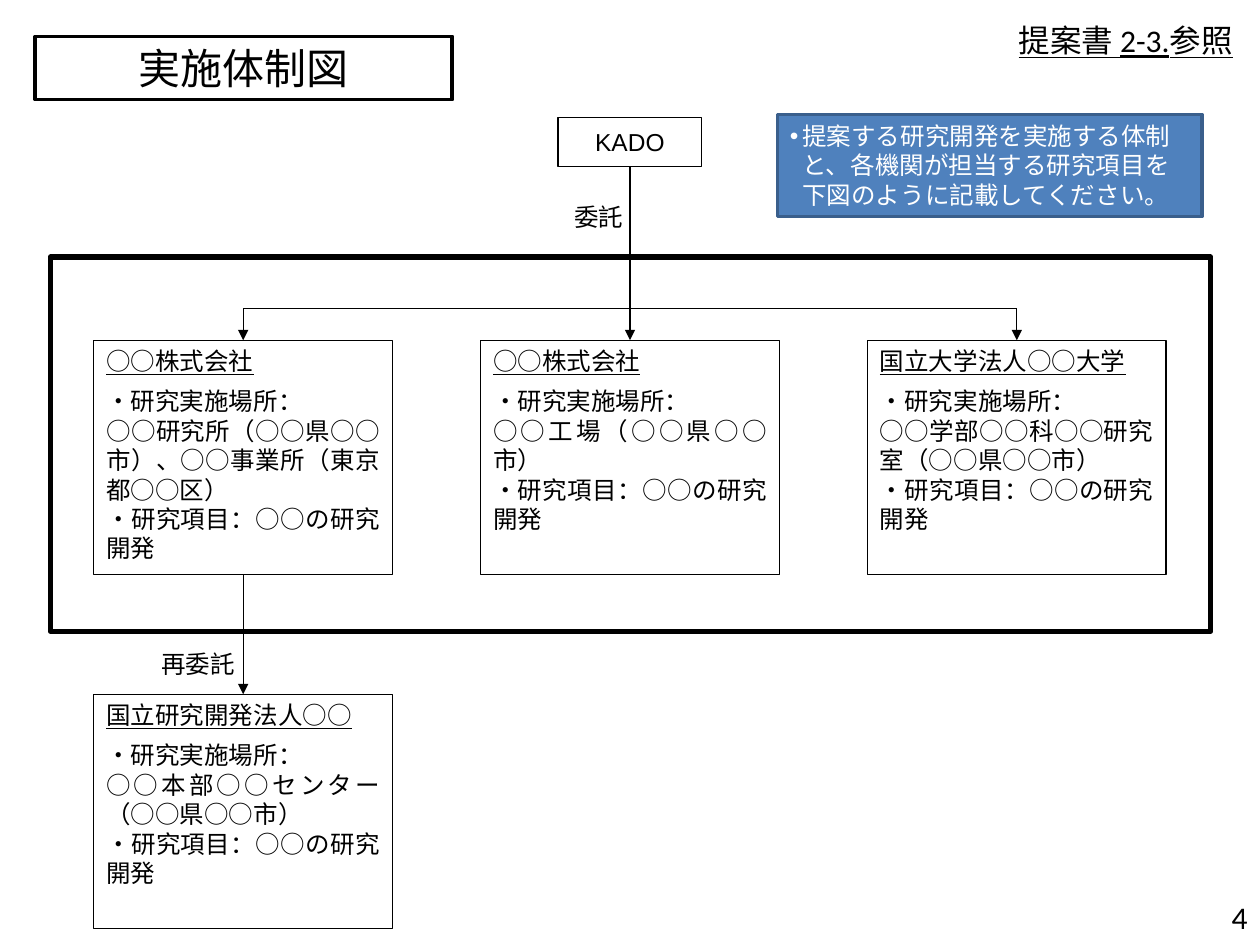
"""Build the project organisation chart slide."""
from dataclasses import dataclass

from lxml.etree import SubElement
from pptx import Presentation
from pptx.dml.color import RGBColor
from pptx.enum.shapes import MSO_CONNECTOR, MSO_SHAPE
from pptx.enum.text import MSO_ANCHOR, PP_ALIGN
from pptx.oxml.ns import qn
from pptx.util import Inches, Pt


@dataclass(frozen=True)
class Theme:
    ink: str = "000000"
    paper: str = "FFFFFF"
    note_fill: str = "4F81BD"
    note_line: str = "3A5F8C"
    title_size: int = 24
    reference_size: int = 18
    body_size: int = 14
    body_font: str = "Arial"
    note_font: str = "Calibri"
    thin: float = 0.75


theme = Theme()
presentation = Presentation()
presentation.slide_width = Inches(10)
presentation.slide_height = Inches(7.5)
slide = presentation.slides.add_slide(presentation.slide_layouts[6])
column = presentation.slide_width / 100
row = presentation.slide_height / 75


def add_text(text, *, at, fill=None, line=None, line_width=theme.thin, size=theme.body_size,
             font=theme.body_font, color=theme.ink, align=PP_ALIGN.JUSTIFY,
             anchor=MSO_ANCHOR.TOP, underline_first=False, bullet=None):
    left, top, width, height = at
    box = (int(left * column), int(top * row), int(width * column), int(height * row))
    if line:
        shape = slide.shapes.add_shape(MSO_SHAPE.RECTANGLE, *box)
        shape.shadow.inherit = False
        shape.line.color.rgb = RGBColor.from_string(line)
        shape.line.width = Pt(line_width)
    else:
        shape = slide.shapes.add_textbox(*box)
    if fill:
        shape.fill.solid()
        shape.fill.fore_color.rgb = RGBColor.from_string(fill)
    else:
        shape.fill.background()
    frame = shape.text_frame
    frame.word_wrap = True
    frame.vertical_anchor = anchor
    frame.text = text
    for index, paragraph in enumerate(frame.paragraphs):
        paragraph.alignment = align
        paragraph.font.size = Pt(size)
        if underline_first and index == 0 and len(frame.paragraphs) > 1:
            paragraph.space_after = Pt(6)
        for run in paragraph.runs:
            run.font.name = font
            run.font.size = Pt(size)
            run.font.color.rgb = RGBColor.from_string(color)
            run.font.underline = underline_first and index == 0
        if bullet:
            properties = paragraph._p.get_or_add_pPr()
            properties.set("marL", str(Inches(0.1)))
            properties.set("indent", str(-Inches(0.1)))
            SubElement(properties, qn("a:buFont"), typeface=theme.body_font)
            SubElement(properties, qn("a:buChar"), char=bullet)


def add_line(start, end, arrow=True):
    connector = slide.shapes.add_connector(
        MSO_CONNECTOR.STRAIGHT,
        int(start[0] * column), int(start[1] * row), int(end[0] * column), int(end[1] * row))
    connector.line.color.rgb = RGBColor.from_string(theme.ink)
    connector.line.width = Pt(theme.thin)
    if arrow:
        SubElement(connector.line._get_or_add_ln(), qn("a:tailEnd"), type="triangle")
    SubElement(connector._element.spPr, qn("a:effectLst"))


card_width, card_height = 23.7, 18.6
card_pitch = 30.7
first_center, center, last_center = [50 + step * card_pitch for step in (-1, 0, 1)]
client_bottom, branch_top, card_top, subcontract_top = 13.1, 24.5, 27, 55.1

add_text("4", at=(76.7, 70.8, 23.3, 4), size=theme.reference_size, font=theme.note_font,
         align=PP_ALIGN.RIGHT, anchor=MSO_ANCHOR.MIDDLE)
add_text("実施体制図", at=(2.8, 2.9, 33.1, 5), fill=theme.paper, line=theme.ink,
         line_width=2.25, size=theme.title_size, align=PP_ALIGN.CENTER)
add_text("提案書 2-3.参照", at=(68.9, 1.2, 29.9, 4), size=theme.reference_size,
         font=theme.note_font, align=PP_ALIGN.RIGHT, underline_first=True)
add_text("", at=(4, 20.4, 92.1, 29.7), line=theme.ink, line_width=3)

add_line((first_center, branch_top), (last_center, branch_top), arrow=False)
add_line((first_center, branch_top), (first_center, card_top))
add_line((center, client_bottom), (center, card_top))
add_line((last_center, branch_top), (last_center, card_top))
add_line((first_center, card_top + card_height), (first_center, subcontract_top))

add_text("KADO", at=(center - 5.7, 9.3, 11.4, 3.9), fill=theme.paper, line=theme.ink,
         align=PP_ALIGN.CENTER, anchor=MSO_ANCHOR.MIDDLE)

members = [
    (first_center, card_top, "○○株式会社", "○○研究所（○○県○○市）、○○事業所（東京都○○区）"),
    (center, card_top, "○○株式会社", "○○工場（○○県○○市）"),
    (last_center, card_top, "国立大学法人○○大学", "○○学部○○科○○研究室（○○県○○市）"),
    (first_center, subcontract_top, "国立研究開発法人○○", "○○本部○○センター（○○県○○市）"),
]
for middle, top, name, place in members:
    add_text("\n".join([name, "・研究実施場所：", place, "・研究項目：○○の研究開発"]),
             at=(middle - card_width / 2, top, card_width, card_height),
             fill=theme.paper, line=theme.ink, underline_first=True)

add_text("再委託", at=(11.8, 51, 8.6, 4.5))
add_text("委託", at=(44.6, 15.5, 11.4, 4.5))
add_text("提案する研究開発を実施する体制と、各機関が担当する研究項目を下図のように記載してください。",
         at=(61.7, 9.1, 33.7, 8.1), fill=theme.note_fill, line=theme.note_line, line_width=2,
         font=theme.note_font, color=theme.paper, align=PP_ALIGN.LEFT, bullet="•")

presentation.save("out.pptx")
